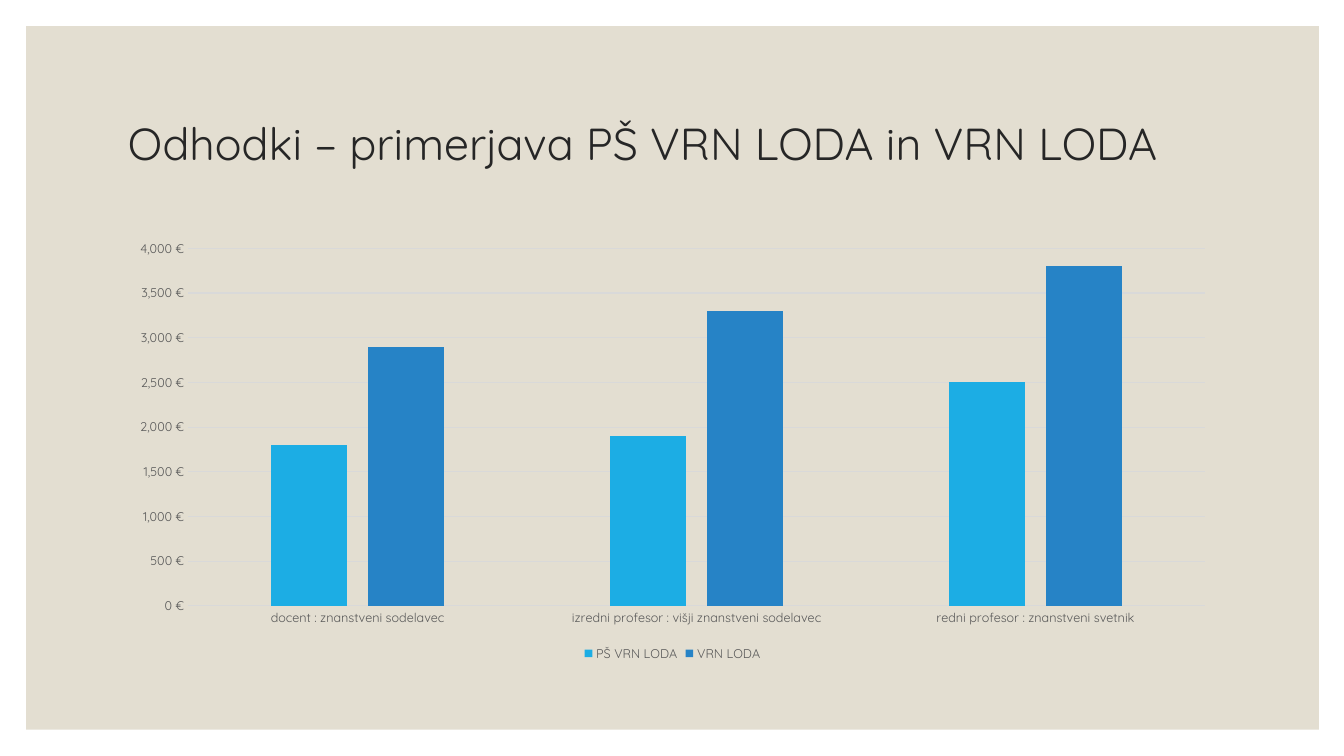
from dataclasses import dataclass
from typing import Any

import pptx
import pptx.chart.data
import pptx.dml.color
import pptx.enum.chart
import pptx.enum.shapes
import pptx.enum.text
import pptx.util

SCALE = 9144  # EMU per px, 100 px to the inch


@dataclass(frozen=True)
class Theme:
    font: str = "Quicksand"
    panel: str = "E3DED1"
    title: str = "262626"
    label: str = "595959"
    grid: str = "D9D9D9"
    head: int = 32
    small: int = 9
    rule: float = 0.75


@dataclass(frozen=True)
class Box:
    left: int
    top: int
    width: int
    height: int

    def emu(self) -> list[pptx.util.Emu]:
        sides = (self.left, self.top, self.width, self.height)
        return [pptx.util.Emu(side * SCALE) for side in sides]


@dataclass(frozen=True)
class Series:
    name: str
    color: str
    values: tuple[int, ...]


THEME = Theme()
PANEL = Box(26, 26, 1282, 698)
TITLE = Box(117, 70, 1100, 150)
CHART = Box(117, 230, 1100, 430)
RANKS = (
    "docent : znanstveni sodelavec",
    "izredni profesor : višji znanstveni sodelavec",
    "redni profesor : znanstveni svetnik",
)
COSTS = (
    Series("PŠ VRN LODA", "1CADE4", (1800, 1900, 2500)),
    Series("VRN LODA", "2683C6", (2900, 3300, 3800)),
)


def apply(target: Any, values: dict[str, Any]) -> None:
    for name, value in values.items():
        setattr(target, name, value)


def paint(fill: Any, color: str) -> None:
    fill.solid()
    fill.fore_color.rgb = pptx.dml.color.RGBColor.from_string(color)


def style(font: Any, size: int, color: str) -> None:
    apply(font, {"name": THEME.font, "size": pptx.util.Pt(size)})
    font.color.rgb = pptx.dml.color.RGBColor.from_string(color)


def rule(line: Any) -> None:
    paint(line.fill, THEME.grid)
    line.width = pptx.util.Pt(THEME.rule)


def draw_panel(slide: Any) -> None:
    kind = pptx.enum.shapes.MSO_SHAPE.RECTANGLE
    panel = slide.shapes.add_shape(kind, *PANEL.emu())
    panel.shadow.inherit = False
    paint(panel.fill, THEME.panel)
    panel.line.fill.background()


def draw_title(slide: Any) -> None:
    frame = slide.shapes.add_textbox(*TITLE.emu()).text_frame
    apply(frame, {
        "word_wrap": True,
        "vertical_anchor": pptx.enum.text.MSO_ANCHOR.MIDDLE,
    })
    para = frame.paragraphs[0]
    names = " in ".join(cost.name for cost in COSTS)
    apply(para, {
        "text": f"Odhodki – primerjava {names}",
        "line_spacing": 0.9,
    })
    style(para.runs[0].font, THEME.head, THEME.title)


def draw_chart(slide: Any) -> None:
    enum = pptx.enum.chart
    data = pptx.chart.data.CategoryChartData()
    data.categories = RANKS
    for cost in COSTS:
        data.add_series(cost.name, cost.values)
    kind = enum.XL_CHART_TYPE.COLUMN_CLUSTERED
    chart = slide.shapes.add_chart(kind, *CHART.emu(), data).chart
    apply(chart, {"has_title": False, "has_legend": True})
    style(chart.font, THEME.small, THEME.label)

    # Columns
    plot = chart.plots[0]
    apply(plot, {"gap_width": 219, "overlap": -27, "vary_by_categories": False})
    for cost, bars in zip(COSTS, plot.series):
        bars.invert_if_negative = False
        paint(bars.format.fill, cost.color)

    # Axes
    for axis in (chart.category_axis, chart.value_axis):
        apply(axis, {
            "major_tick_mark": enum.XL_TICK_MARK.NONE,
            "minor_tick_mark": enum.XL_TICK_MARK.NONE,
        })
        style(axis.tick_labels.font, THEME.small, THEME.label)
    rule(chart.category_axis.format.line)
    money = chart.value_axis
    apply(money, {
        "minimum_scale": 0,
        "maximum_scale": 4000,
        "major_unit": 500,
        "has_major_gridlines": True,
    })
    rule(money.major_gridlines.format.line)
    money.format.line.fill.background()
    apply(money.tick_labels, {
        "number_format": '#,##0\\ "€"',
        "number_format_is_linked": False,
    })

    # Legend
    apply(chart.legend, {
        "position": enum.XL_LEGEND_POSITION.BOTTOM,
        "include_in_layout": False,
    })
    style(chart.legend.font, THEME.small, THEME.label)


def main() -> None:
    deck = pptx.Presentation()
    apply(deck, {
        "slide_width": pptx.util.Emu(1333 * SCALE),
        "slide_height": pptx.util.Emu(750 * SCALE),
    })
    slide = deck.slides.add_slide(deck.slide_layouts[6])
    draw_panel(slide)
    draw_title(slide)
    draw_chart(slide)
    deck.save("out.pptx")


if __name__ == "__main__":
    main()
